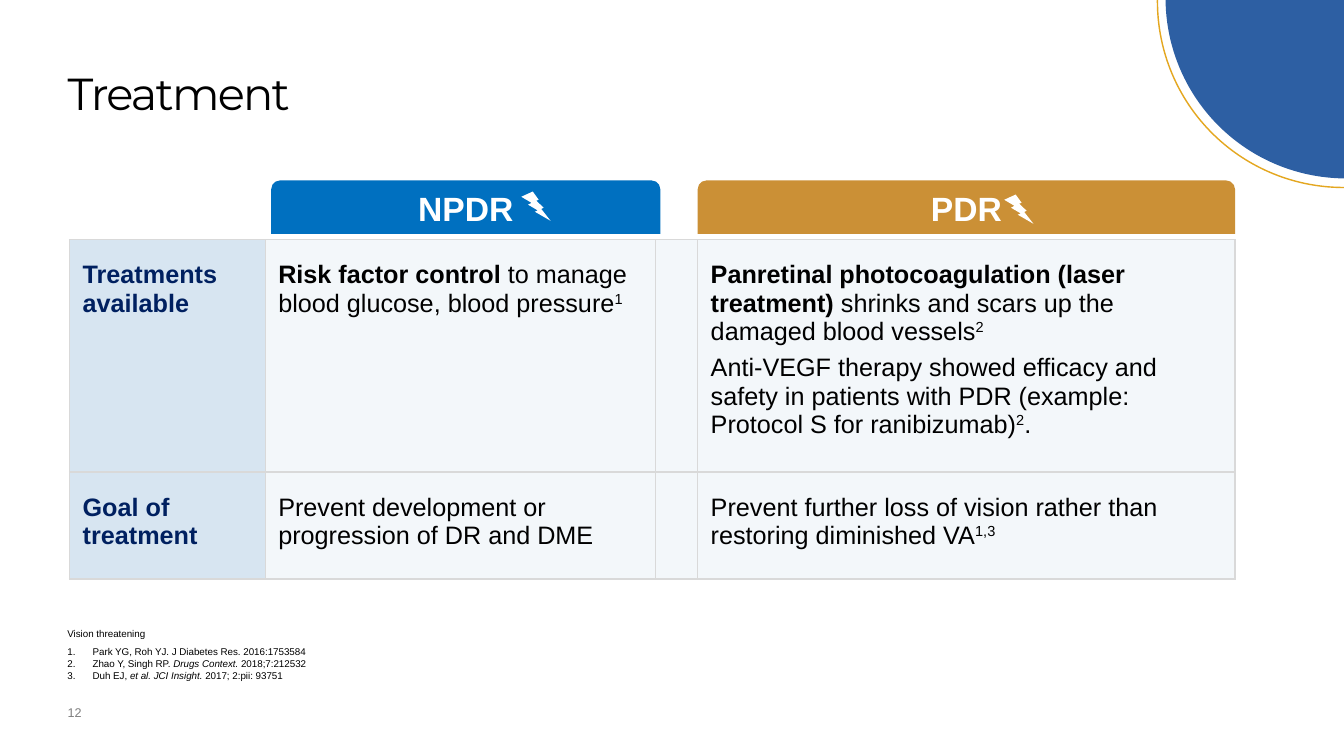
from lxml import etree
from pptx import Presentation, util as u
from pptx.dml.color import RGBColor
from pptx.enum import shapes, text
from pptx.oxml.ns import qn

HUE = {"disc": "2D5FA3", "ring": "E4A720", "npdr": "0070C0", "pdr": "CB9036",
       "white": "FFFFFF", "black": "000000", "grey": "7F7F7F", "navy": "002060",
       "head": "D7E5F1", "body": "EBF2F8", "rule": "D9D9D9"}
KIND = shapes.MSO_SHAPE


def write(para, runs, size, hue="black", face="Arial"):
    """Add (words, style) runs; style letters: b bold, i italic, s superscript."""
    for words, style in runs:
        run = para.add_run()
        run.text = words
        font = run.font
        font.size, font.name = u.Pt(size), face
        font.color.rgb = RGBColor.from_string(HUE[hue])
        font.bold, font.italic = "b" in style, "i" in style
        if "s" in style:
            run._r.get_or_add_rPr().set("baseline", "30000")


def draw(kind, box, hue=None, turn=0, adj=()):
    """Add a flat shape, or a text box when kind is None; box is in inches."""
    area = [u.Inches(n) for n in box]
    if kind is None:
        item = slide.shapes.add_textbox(*area)
        item.text_frame.word_wrap = True
        return item
    item = slide.shapes.add_shape(kind, *area)
    item.shadow.inherit = False
    item.rotation = turn
    for i, n in enumerate(adj):
        item.adjustments[i] = n
    item.line.fill.background()
    if hue:
        item.fill.solid()
        item.fill.fore_color.rgb = RGBColor.from_string(HUE[hue])
    else:
        item.fill.background()
    return item


deck = Presentation()
deck.slide_width, deck.slide_height = u.Inches(13.33), u.Inches(7.5)
slide = deck.slides.add_slide(deck.slide_layouts[6])

# Corner ornament
draw(KIND.PIE, (11.56, -1.81, 3.58, 3.58), "disc", 270, (108.29, 162))
ring = draw(KIND.BLOCK_ARC, (11.48, -1.83, 3.69, 3.69), None, 270, (107.95, 162.65, 0))
ring.line.color.rgb = RGBColor.from_string(HUE["ring"])
ring.line.width = u.Pt(1)

# Title and page number
for box, words, size, hue, face in [
        ((0.67, 0.2, 10.87, 1.5), "Treatment", 32, "black", "Montserrat"),
        ((0.67, 6.99, 0.33, 0.43), "12", 9, "grey", "Arial")]:
    frame = draw(None, box).text_frame
    frame.margin_left = frame.margin_right = frame.margin_top = frame.margin_bottom = 0
    para = frame.paragraphs[0]
    write(para, [(words, "")], size, hue, face)
    if words == "Treatment":
        frame.vertical_anchor = text.MSO_ANCHOR.MIDDLE
        para.line_spacing = 0.9
        para.runs[0]._r.get_or_add_rPr().set("spc", "-130")

# Footnotes
note = draw(None, (0.57, 6.18, 1.55, 0.22)).text_frame
write(note.paragraphs[0], [("Vision threatening", "")], 7)
refs = [
    [("Park YG, Roh YJ. J Diabetes Res. 2016:1753584", "")],
    [("Zhao Y, Singh RP. ", ""), ("Drugs Context.", "i"), (" 2018;7:212532", "")],
    [("Duh EJ, ", ""), ("et al. JCI Insight. ", "i"), ("2017; 2:pii: 93751", "")],
]
frame = draw(None, (0.57, 6.36, 11.98, 0.45)).text_frame
for i, runs in enumerate(refs):
    para = frame.add_paragraph() if i else frame.paragraphs[0]
    prop = para._p.get_or_add_pPr()
    prop.set("marL", str(u.Inches(0.25)))
    prop.set("indent", str(-u.Inches(0.25)))
    etree.SubElement(prop, qn("a:buFont"), typeface="+mj-lt")
    etree.SubElement(prop, qn("a:buAutoNum"), type="arabicPeriod")
    write(para, runs, 7)

# Table: each cell is a list of paragraphs, each paragraph a list of runs
cells = [
    [[[("Treatments available", "b")]],
     [[("Risk factor control ", "b"),
       ("to manage blood glucose, blood pressure", ""), ("1", "s")]],
     [],
     [[("Panretinal photocoagulation (laser treatment) ", "b"),
       ("shrinks and scars up the damaged blood vessels", ""), ("2", "s")],
      [("Anti-VEGF therapy showed efficacy and safety in patients with PDR "
        "(example: Protocol S for ranibizumab)", ""), ("2", "s"), (".", "")]]],
    [[[("Goal of treatment", "b")]],
     [[("Prevent development or progression of DR and DME", "")]],
     [],
     [[("Prevent further loss of vision rather than restoring diminished VA", ""),
       ("1,3", "s")]]],
]
wide, high = [1.94, 3.87, 0.42, 5.33], [2.3, 1.06]
area = [u.Inches(n) for n in (0.69, 2.38, sum(wide), sum(high))]
table = slide.shapes.add_table(len(high), len(wide), *area).table
table.first_row = table.horz_banding = False
for c, n in enumerate(wide):
    table.columns[c].width = u.Inches(n)
for r, n in enumerate(high):
    table.rows[r].height = u.Inches(n)
    for c, paras in enumerate(cells[r]):
        cell = table.cell(r, c)
        cell.margin_left = cell.margin_right = u.Inches(0.13)
        cell.margin_top = cell.margin_bottom = u.Inches(0.21)
        cell.fill.solid()
        cell.fill.fore_color.rgb = RGBColor.from_string(HUE["body" if c else "head"])
        prop = cell._tc.get_or_add_tcPr()
        if c:
            tint = prop.find(".//" + qn("a:srgbClr"))
            etree.SubElement(tint, qn("a:alpha"), val="58000")
        for i, side in enumerate("LRTB"):
            edge = etree.Element(qn("a:ln" + side), w=str(u.Pt(1)))
            solid = etree.SubElement(edge, qn("a:solidFill"))
            etree.SubElement(solid, qn("a:srgbClr"), val=HUE["rule"])
            prop.insert(i, edge)
        for i, runs in enumerate(paras):
            para = cell.text_frame.add_paragraph() if i else cell.text_frame.paragraphs[0]
            if i:
                para.space_before = u.Pt(6)
            write(para, runs, 18, "black" if c else "navy")

# Column headings with their bolts
for words, left, width, hue, bolt in [("NPDR", 2.69, 3.86, "npdr", (5.17, 1.9)),
                                      ("PDR", 6.92, 5.33, "pdr", (9.96, 1.93))]:
    tab = draw(KIND.ROUND_2_SAME_RECTANGLE, (left, 1.79, width, 0.53), hue)
    tab.text_frame.vertical_anchor = text.MSO_ANCHOR.MIDDLE
    para = tab.text_frame.paragraphs[0]
    para.alignment = text.PP_ALIGN.CENTER
    write(para, [(words, "b")], 24, "white")
    draw(KIND.LIGHTNING_BOLT, (*bolt, 0.29, 0.29), "white")

deck.save("out.pptx")
